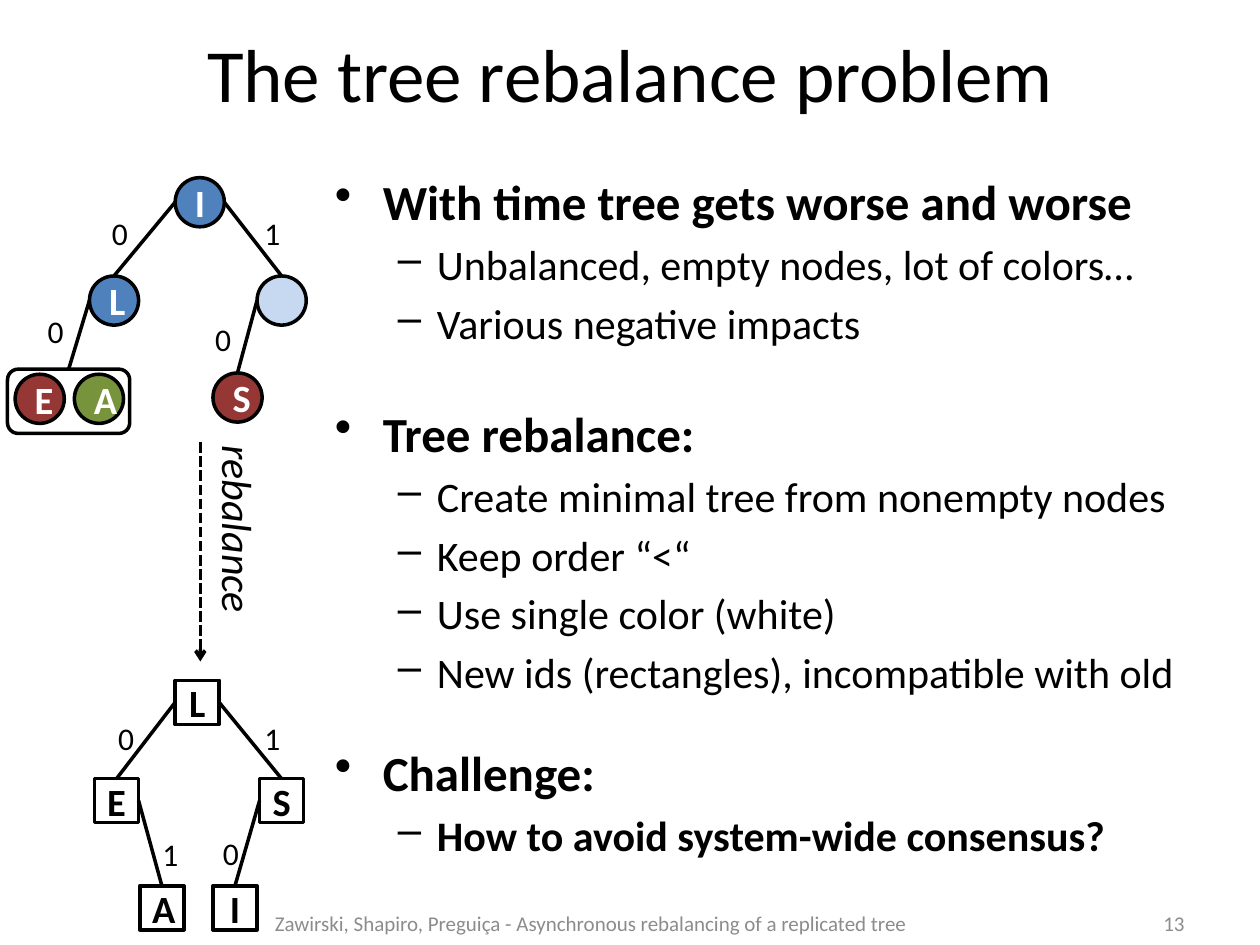
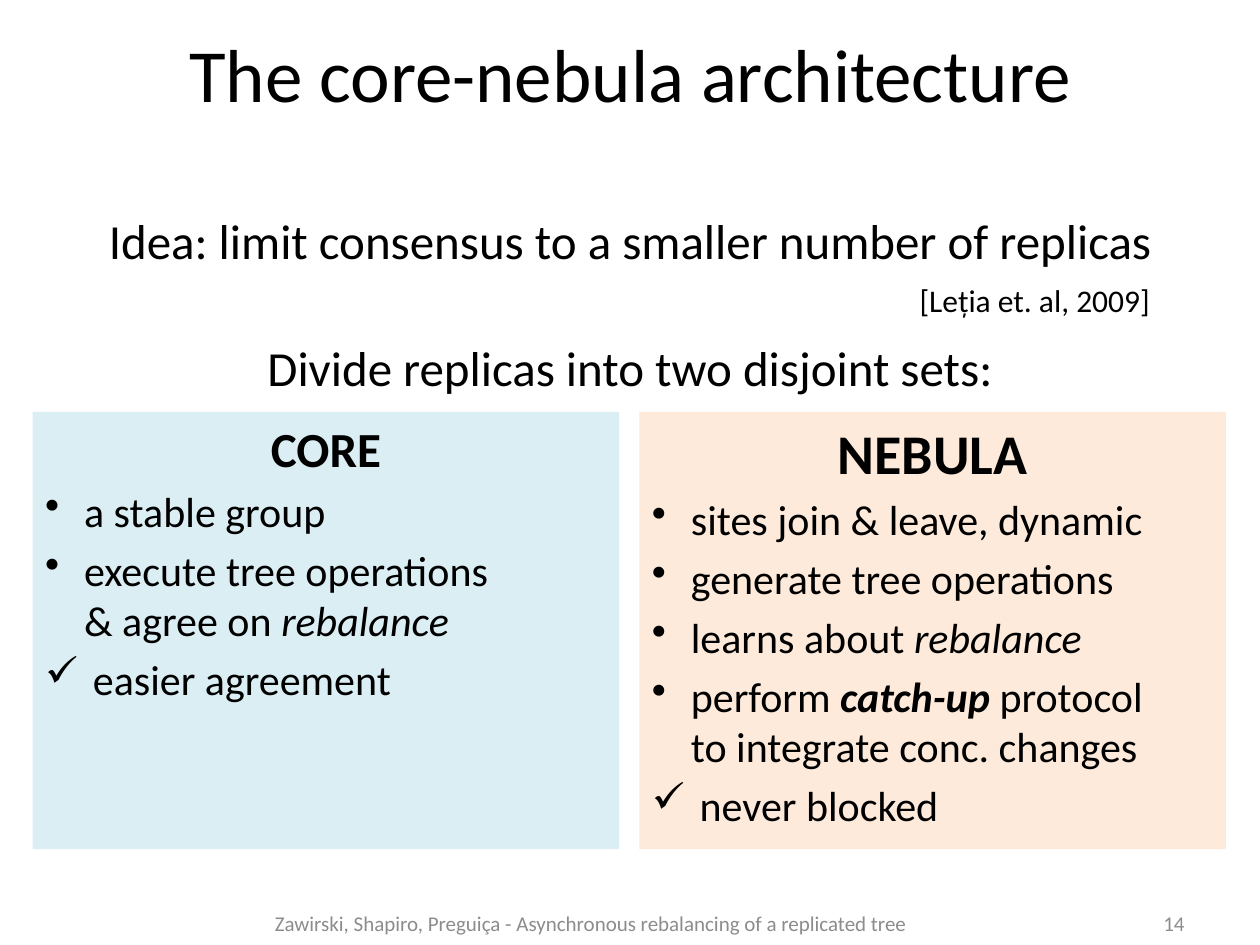
from lxml import etree
from pptx import Presentation
from pptx import util as u
from pptx.dml import color as dml_color
from pptx.enum import dml, shapes, text
from pptx.oxml import ns

COLUMNS, ROWS = 100, 75
SLIDE_WIDTH, SLIDE_HEIGHT = u.Inches(10), u.Inches(7.5)
FONT = "Calibri"
COLOURS = {
    "ink": "000000", "paper": "FFFFFF", "muted": "8C8C8C",
    "blue": "4F81BD", "pale": "C6D9F1", "red": "953735", "green": "77933C",
    "core": "DBEEF4", "nebula": "FDEADA",
}
FOOTER = "Zawirski, Shapiro, Preguiça - Asynchronous rebalancing of a replicated tree"
LEFT, CENTRE, RIGHT = text.PP_ALIGN.LEFT, text.PP_ALIGN.CENTER, text.PP_ALIGN.RIGHT
MIDDLE, TOP = text.MSO_ANCHOR.MIDDLE, text.MSO_ANCHOR.TOP
OVAL = shapes.MSO_SHAPE.OVAL
RECTANGLE = shapes.MSO_SHAPE.RECTANGLE
ROUNDED = shapes.MSO_SHAPE.ROUNDED_RECTANGLE
BULLETS = {
    "heading": ("•", 0.38), "detail": ("–", 0.31),
    "point": ("•", 0.31), "benefit": ("✓", 0.38),
}
DETAIL_MARGIN = 0.81

OLD_TREE = {
    "nodes": {
        "EA": (0, 15.2, 9.7, 5.1, ROUNDED, "paper"),
        "": (19.8, 7.8, 3.9, 3.9, OVAL, "pale"),
        "L": (6.5, 7.8, 3.9, 3.9, OVAL, "blue"),
        "I": (13.3, 0, 3.9, 3.9, OVAL, "blue"),
        "S": (16.3, 15.5, 3.9, 3.9, OVAL, "red"),
        "E": (0.6, 15.6, 3.9, 3.9, OVAL, "red"),
        "A": (5.3, 15.6, 3.9, 3.9, OVAL, "green"),
    },
    "edges": [("I", "left", "L"), ("I", "right", ""), ("", "left", "S"), ("L", "left", "EA")],
    "bits": [("0", 7.3, 2.4), ("1", 19.4, 2.4), ("0", 15.5, 10.8), ("0", 2.2, 10.2)],
    "letter": "paper",
}
NEW_TREE = {
    "nodes": {
        letter: (x, y, 3.5, 3.5, RECTANGLE, "paper")
        for letter, x, y in [("L", 6.4, 0), ("E", 0, 7.8), ("S", 13.1, 7.8),
                             ("A", 3.6, 16.3), ("I", 9.4, 16.3)]
    },
    "edges": [("L", "left", "E"), ("L", "right", "S"), ("E", "right", "A"), ("S", "left", "I")],
    "bits": [("0", 0.9, 2.6), ("1", 12.5, 2.6), ("0", 9.2, 11.7), ("1", 4.4, 11.8)],
    "letter": "ink",
}
PROBLEM_TOPICS = [
    (13.1, 16.9, "With time tree gets worse and worse",
     ["Unbalanced, empty nodes, lot of colors…", "Various negative impacts"], {}),
    (31.5, 20.5, "Tree rebalance:",
     ["Create minimal tree from nonempty nodes", "Keep order “<“",
      "Use single color (white)", "New ids (rectangles), incompatible with old"], {}),
    (58.4, 14.1, "Challenge:", ["How to avoid system-wide consensus?"], {"bold": True}),
]
ITALIC = {"italic": True}
REPLICA_SETS = [
    ("core", "CORE", 28,
     [[("a stable group", {})],
      [("execute tree operations\n& agree on ", {}), ("rebalance", ITALIC)]],
     "easier agreement"),
    ("nebula", "NEBULA", 32,
     [[("sites join & leave, dynamic", {})],
      [("generate tree operations", {})],
      [("learns about ", {}), ("rebalance", ITALIC)],
      [("perform ", {}), ("catch-up ", {"bold": True, "italic": True}),
       ("protocol\nto integrate conc. changes", {})]],
     "never blocked"),
]


def across(columns):
    """Return the length of a number of grid columns."""
    return round(SLIDE_WIDTH * columns / COLUMNS)


def down(rows):
    """Return the length of a number of grid rows."""
    return round(SLIDE_HEIGHT * rows / ROWS)


def place(box):
    """Turn a box in columns and rows into slide lengths."""
    left, top, width, height = box
    return across(left), down(top), across(width), down(height)


def rgb(name):
    """Look up a colour of the palette."""
    return dml_color.RGBColor.from_string(COLOURS[name])


def assign(target, values):
    """Set each named attribute of the target."""
    for name, value in values.items():
        setattr(target, name, value)


def paragraph(runs, size, align=LEFT, bullet=None, before=None, colour="ink"):
    """Describe one paragraph; runs is a string or pairs of words and flags."""
    if isinstance(runs, str):
        runs = [(runs, {})]
    return {"runs": runs, "size": size, "align": align, "bullet": bullet,
            "before": size * 0.2 if before is None else before, "colour": colour}


def add_bullet(line, kind):
    """Give a paragraph its hanging bullet."""
    mark, hang = BULLETS[kind]
    margin = DETAIL_MARGIN if kind == "detail" else hang
    properties = line._p.get_or_add_pPr()
    properties.set("marL", str(u.Inches(margin)))
    properties.set("indent", str(-u.Inches(hang)))
    etree.SubElement(properties, ns.qn("a:buChar")).set("char", mark)


def write(frame, paragraphs, anchor=TOP, wrap=True):
    """Fill a text frame with described paragraphs."""
    assign(frame, {"word_wrap": wrap, "vertical_anchor": anchor})
    for index, content in enumerate(paragraphs):
        line = frame.add_paragraph() if index else frame.paragraphs[0]
        line.alignment = content["align"]
        if index:
            line.space_before = u.Pt(content["before"])
        if content["bullet"]:
            add_bullet(line, content["bullet"])
        for words, flags in content["runs"]:
            for part, piece in enumerate(words.split("\n")):
                if part:
                    line.add_line_break()
                run = line.add_run()
                run.text = piece
                assign(run.font, {"name": FONT, "size": u.Pt(content["size"]), **flags})
                run.font.color.rgb = rgb(content["colour"])


def add_words(slide, box, paragraphs, **layout):
    """Place a text box and return it."""
    words = slide.shapes.add_textbox(*place(box))
    write(words.text_frame, paragraphs, **layout)
    return words


def add_block(slide, box, outline, fill, border=True):
    """Place a flat filled shape, with or without a border."""
    block = slide.shapes.add_shape(outline, *place(box))
    block.shadow.inherit = False
    block.fill.solid()
    block.fill.fore_color.rgb = rgb(fill)
    if border:
        block.line.color.rgb = rgb("ink")
        block.line.width = u.Pt(2)
    else:
        block.line.fill.background()
    return block


def add_line(slide, start, end):
    """Draw a straight line between two points given in slide lengths."""
    line = slide.shapes.add_connector(shapes.MSO_CONNECTOR.STRAIGHT, *start, *end)
    line.line.color.rgb = rgb("ink")
    line.line.width = u.Pt(2)
    etree.SubElement(line._element.spPr, ns.qn("a:effectLst"))
    return line


def add_edge(slide, parent, side, child):
    """Link a side of the parent node to the top of the child node."""
    start = (parent.left + (parent.width if side == "right" else 0),
             parent.top + parent.height // 2)
    end = child.left + child.width // 2, child.top
    edge = add_line(slide, start, end)
    if parent.auto_shape_type != OVAL:
        edge.begin_connect(parent, {"left": 1, "right": 3}[side])
    if child.auto_shape_type != OVAL:
        edge.end_connect(child, 0)


def add_tree(slide, box, tree):
    """Draw nodes, edges and edge bits from the corner of the box."""
    left, top = box[:2]
    nodes = {}
    for letter, (x, y, width, height, outline, fill) in tree["nodes"].items():
        node = add_block(slide, (left + x, top + y, width, height), outline, fill)
        if len(letter) == 1:
            label = paragraph([(letter, {"bold": True})], 22, CENTRE, colour=tree["letter"])
            write(node.text_frame, [label], anchor=MIDDLE)
        nodes[letter] = node
    for parent, side, child in tree["edges"]:
        add_edge(slide, nodes[parent], side, nodes[child])
    for bit, x, y in tree["bits"]:
        add_words(slide, (left + x, top + y, 3.4, 4), [paragraph(bit, 18)])


def add_rebalance_arrow(slide, box):
    """Draw the dashed arrow down the left of the box with its turned label."""
    left, top, width, height = box
    arrow = add_line(slide, (across(left), down(top)), (across(left), down(top + height)))
    arrow.line.dash_style = dml.MSO_LINE.SQUARE_DOT
    etree.SubElement(arrow.line._ln, ns.qn("a:tailEnd")).set("type", "arrow")
    length, thickness = 16.2, 4.9
    label_box = (left + (width - length) / 2, top + 4.9, length, thickness)
    label = add_words(slide, label_box, [paragraph([("rebalance", ITALIC)], 24)])
    label.rotation = 90


def add_topics(slide, box, topics):
    """Place the headed bullet lists down the box."""
    left, width = box[0], box[2]
    for top, height, heading, details, flags in topics:
        lines = [paragraph([(heading, {"bold": True})], 28, bullet="heading")]
        lines += [paragraph([(detail, flags)], 24, bullet="detail") for detail in details]
        add_words(slide, (left, top, width, height), lines)


def add_replica_sets(slide, box, gap):
    """Share the box between the panels of the replica sets."""
    left, top, width, height = box
    panel_width = (width - gap * (len(REPLICA_SETS) - 1)) / len(REPLICA_SETS)
    for index, (fill, name, size, points, benefit) in enumerate(REPLICA_SETS):
        panel_box = (left + index * (panel_width + gap), top, panel_width, height)
        panel = add_block(slide, panel_box, RECTANGLE, fill, border=False)
        lines = [paragraph([(name, {"bold": True})], size, CENTRE)]
        lines += [paragraph(point, 24, bullet="point") for point in points]
        lines.append(paragraph(benefit, 24, bullet="benefit"))
        write(panel.text_frame, lines)


def add_page(deck, title, number):
    """Add a blank slide with the shared title, footer and number."""
    slide = deck.slides.add_slide(deck.slide_layouts[6])
    for box, words, size, align, colour in [
        ((0, 0, COLUMNS, 11.5), title, 42.9, CENTRE, "ink"),
        ((71.7, 71.3, 23.3, 4), str(number), 12, RIGHT, "muted"),
        ((2, 71.3, 89.8, 4), FOOTER, 12, CENTRE, "muted"),
    ]:
        add_words(slide, box, [paragraph(words, size, align, colour=colour)], anchor=MIDDLE)
    return slide


def add_problem_slide(deck):
    """Build the slide on the tree rebalance problem."""
    slide = add_page(deck, "The tree rebalance problem", 13)
    add_rebalance_arrow(slide, (15.9, 35.1, 6.2, 17.4))
    add_topics(slide, (25.6, 13.1, 72.3, 59.4), PROBLEM_TOPICS)
    add_tree(slide, (0.6, 14.1, 23.7, 20.3), OLD_TREE)
    add_tree(slide, (7.5, 54, 16.6, 19.8), NEW_TREE)


def add_architecture_slide(deck):
    """Build the slide on the core-nebula architecture."""
    slide = add_page(deck, "The core-nebula architecture", 14)
    add_words(slide, (5, 16.2, 90, 14.2), [
        paragraph("Idea: limit consensus to a smaller number of replicas", 28, CENTRE),
        paragraph("Divide replicas into two disjoint sets:", 28, CENTRE, before=39),
    ])
    add_replica_sets(slide, (2.6, 32.7, 94.7, 34.7), gap=1.6)
    add_words(slide, (72, 21.8, 20.5, 4), [paragraph("[Leția et. al, 2009]", 18)], wrap=False)


def main():
    """Build and save the presentation."""
    deck = Presentation()
    assign(deck, {"slide_width": SLIDE_WIDTH, "slide_height": SLIDE_HEIGHT})
    add_problem_slide(deck)
    add_architecture_slide(deck)
    deck.save("out.pptx")


if __name__ == "__main__":
    main()
